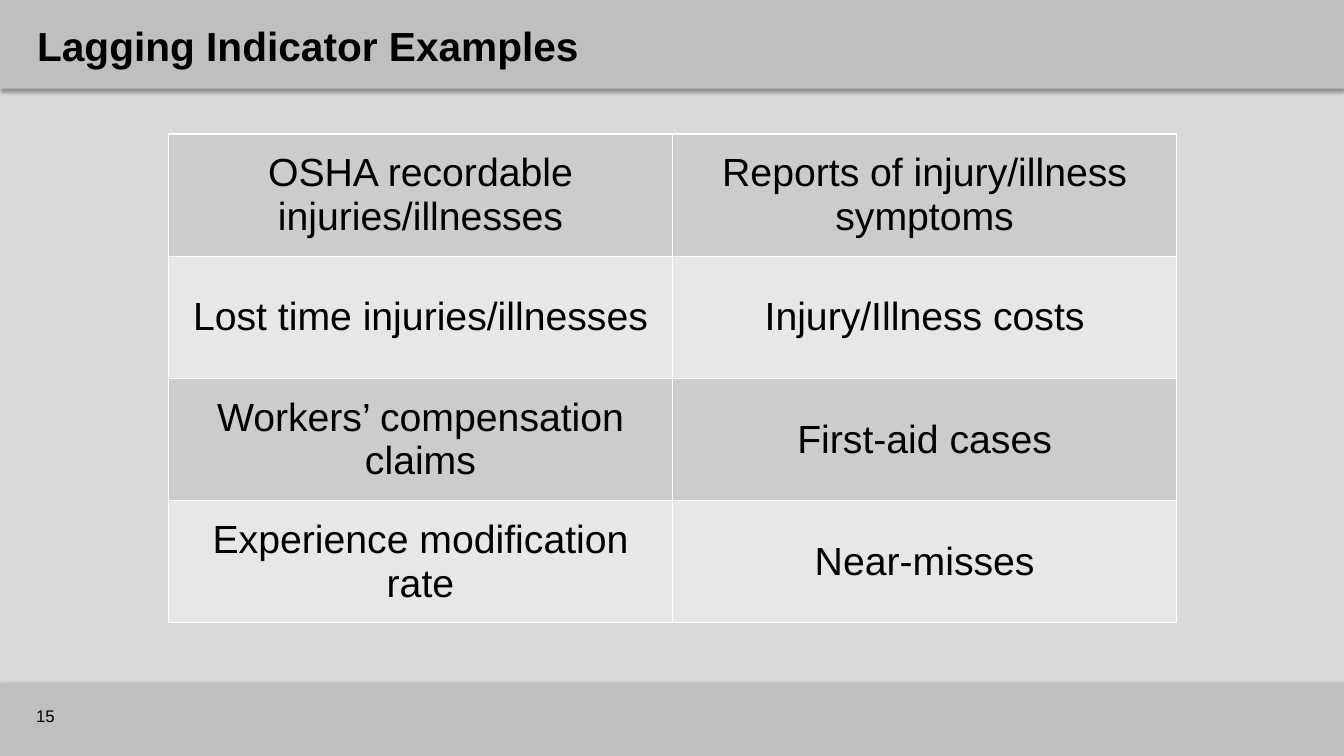
from lxml import etree
from pptx import Presentation
from pptx.dml.color import RGBColor
from pptx.enum.shapes import MSO_SHAPE
from pptx.enum.text import MSO_ANCHOR, PP_ALIGN
from pptx.oxml import parse_xml
from pptx.oxml.ns import nsdecls, qn
from pptx.util import Inches, Pt

RECT = MSO_SHAPE.RECTANGLE
MIDDLE = MSO_ANCHOR.MIDDLE
LEFT, CENTER = PP_ALIGN.LEFT, PP_ALIGN.CENTER

BACKGROUND = RGBColor(0xD9, 0xD9, 0xD9)
BAND = RGBColor(0xBF, 0xBF, 0xBF)
ROW_DARK = RGBColor(0xCC, 0xCC, 0xCC)
ROW_LIGHT = RGBColor(0xE7, 0xE7, 0xE7)
WHITE = RGBColor(0xFF, 0xFF, 0xFF)
BLACK = RGBColor(0, 0, 0)

WIDTH, HEIGHT = 13.33, 7.5
INDICATORS = [
    ("OSHA recordable injuries/illnesses", "Reports of injury/illness symptoms"),
    ("Lost time injuries/illnesses", "Injury/Illness costs"),
    ("Workers’ compensation claims", "First-aid cases"),
    ("Experience modification rate", "Near-misses"),
]


def write_text(tf, text, size, bold=False, align=LEFT):
    tf.word_wrap = True
    p = tf.paragraphs[0]
    p.alignment = align
    r = p.add_run()
    r.text = text
    r.font.name = "Arial"
    r.font.size = Pt(size)
    r.font.bold = bold
    r.font.color.rgb = BLACK


def add_shadow(sp):
    sp.shadow.inherit = False
    effects = sp._element.spPr.find(qn("a:effectLst"))
    effects.append(parse_xml(
        f'<a:outerShdw {nsdecls("a")} blurRad="{Pt(3.1)}" dist="{Pt(1.8)}" '
        'dir="5400000" rotWithShape="0"><a:srgbClr val="000000">'
        '<a:alpha val="35000"/></a:srgbClr></a:outerShdw>'))


def add_band(s, top, height, text, text_box, size, bold=False):
    sp = s.shapes.add_shape(RECT, 0, Inches(top), Inches(WIDTH), Inches(height))
    sp.fill.solid()
    sp.fill.fore_color.rgb = BAND
    sp.line.fill.background()
    add_shadow(sp)
    left, offset, width, text_height = text_box
    box = s.shapes.add_textbox(Inches(left), Inches(top + offset),
                               Inches(width), Inches(text_height))
    box.text_frame.vertical_anchor = MIDDLE
    write_text(box.text_frame, text, size, bold)


def add_borders(cell, color, width):
    tcPr = cell._tc.get_or_add_tcPr()
    for i, side in enumerate(("lnL", "lnR", "lnT", "lnB")):
        ln = etree.Element(qn(f"a:{side}"), w=str(Pt(width)))
        fill = etree.SubElement(ln, qn("a:solidFill"))
        etree.SubElement(fill, qn("a:srgbClr"), val=str(color))
        tcPr.insert(i, ln)


def add_indicator_table(s, left, top, width, height, rows):
    frame = s.shapes.add_table(len(rows), len(rows[0]), Inches(left), Inches(top),
                               Inches(width), Inches(height))
    table = frame.table
    table.first_row = False
    for i, row in enumerate(rows):
        for j, text in enumerate(row):
            cell = table.cell(i, j)
            cell.vertical_anchor = MIDDLE
            cell.fill.solid()
            cell.fill.fore_color.rgb = ROW_LIGHT if i % 2 else ROW_DARK
            add_borders(cell, WHITE, 1)
            write_text(cell.text_frame, text, 28, align=CENTER)


def main():
    prs = Presentation()
    prs.slide_width, prs.slide_height = Inches(WIDTH), Inches(HEIGHT)
    s = prs.slides.add_slide(prs.slide_layouts[6])
    s.background.fill.solid()
    s.background.fill.fore_color.rgb = BACKGROUND
    add_band(s, HEIGHT - 0.72, 0.72, "15", (0.26, 0.12, 1, 0.4), 12)
    add_band(s, 0, 0.88, "Lagging Indicator Examples",
             (0.27, 0.14, 12.93, 0.62), 29, bold=True)
    add_indicator_table(s, 1.67, 1.33, 10, 4.85, INDICATORS)
    prs.save("out.pptx")


if __name__ == "__main__":
    main()
